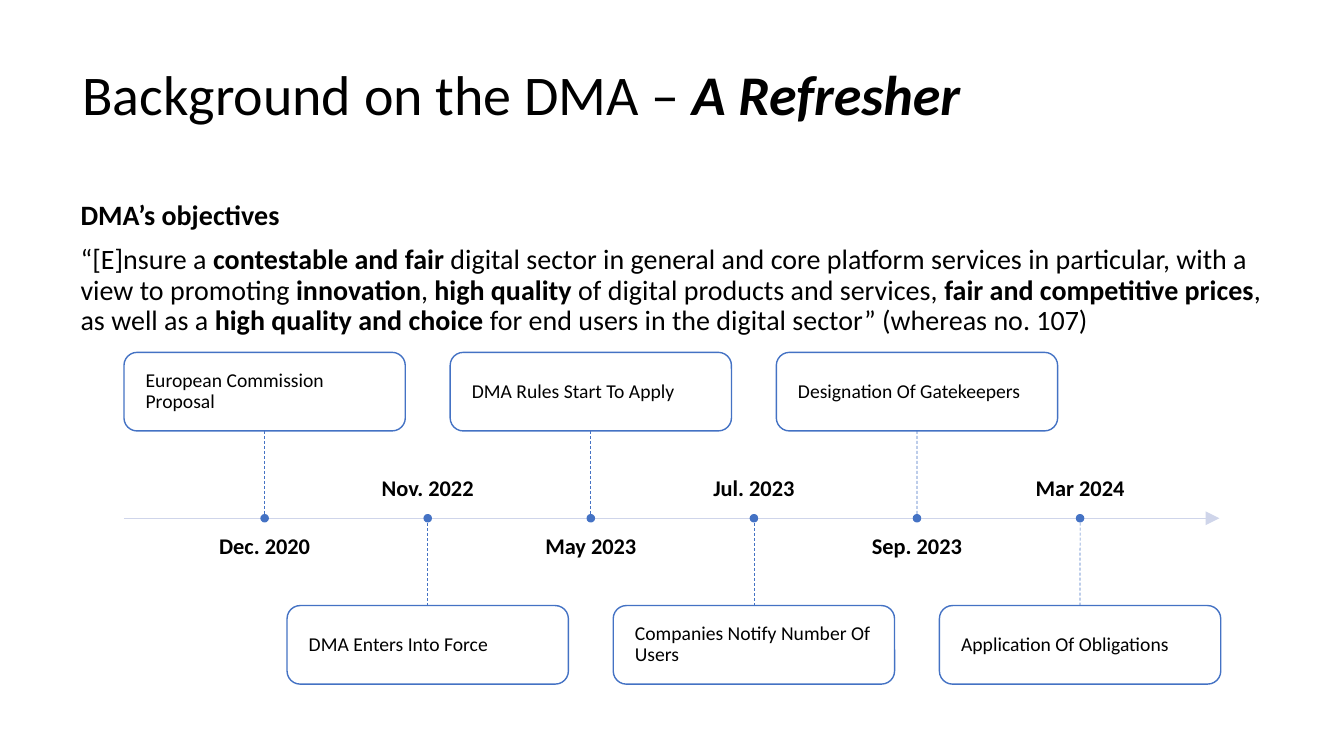
import pptx
import pptx.util
from lxml import etree
from pptx.dml.color import RGBColor
from pptx.enum.dml import MSO_LINE
from pptx.enum.shapes import MSO_CONNECTOR, MSO_SHAPE
from pptx.enum.text import MSO_ANCHOR, MSO_AUTO_SIZE, PP_ALIGN
from pptx.oxml.ns import qn
from pptx.util import Cm, Pt

BLACK = RGBColor(0x00, 0x00, 0x00)
WHITE = RGBColor(0xFF, 0xFF, 0xFF)
BLUE = RGBColor(0x44, 0x72, 0xC4)
PALE_BLUE = RGBColor(0xCF, 0xD5, 0xEA)

# Timeline geometry in centimetres
AXIS_LEFT, AXIS_RIGHT, AXIS_Y = 3.12, 30.73, 13.06
FIRST_CENTER, STEP = 6.67, 4.11
BOX_WIDTH, BOX_HEIGHT, BOX_GAP = 7.09, 1.98, 2.2
DATE_WIDTH, DATE_HEIGHT, DATE_GAP = 6.22, 1.3, 0.43
DOT_SIZE = 0.18

OBJECTIVES = [
    [("DMA’s objectives", True)],
    [
        ("“[E]nsure a ", False),
        ("contestable and fair ", True),
        ("digital sector in general and core platform services in particular, "
         "with a view to promoting ", False),
        ("innovation", True),
        (", ", False),
        ("high quality ", True),
        ("of digital products and services, ", False),
        ("fair and competitive prices", True),
        (", as well as a ", False),
        ("high quality and choice ", True),
        ("for end users in the digital sector” (whereas no. 107)", False),
    ],
]
MILESTONES = [
    ("Dec. 2020", "European Commission Proposal"),
    ("Nov. 2022", "DMA Enters Into Force"),
    ("May 2023", "DMA Rules Start To Apply"),
    ("Jul. 2023", "Companies Notify Number Of Users"),
    ("Sep. 2023", "Designation Of Gatekeepers"),
    ("Mar 2024", "Application Of Obligations"),
]


def apply_format(target, values):
    for name, value in values.items():
        setattr(target, name, value)


class TimelineSlide:
    """Holds the text style and the slide being built."""

    font_name = "Calibri"

    def __init__(self, presentation):
        self.slide = presentation.slides.add_slide(presentation.slide_layouts[1])
        self.shapes = self.slide.shapes

    def add_run(self, paragraph, text, size, bold=False, italic=False):
        run = paragraph.add_run()
        run.text = text
        apply_format(run.font, {"name": self.font_name, "size": Pt(size),
                                "bold": bold, "italic": italic})
        run.font.color.rgb = BLACK

    def set_frame(self, shape, anchor, margin):
        apply_format(shape.text_frame, {
            "word_wrap": True, "auto_size": MSO_AUTO_SIZE.NONE,
            "vertical_anchor": anchor,
            "margin_left": Cm(margin), "margin_right": Cm(margin),
            "margin_top": Cm(margin / 2), "margin_bottom": Cm(margin / 2)})
        return shape.text_frame

    def place(self, shape, left, top, width, height):
        apply_format(shape, {"left": Cm(left), "top": Cm(top),
                             "width": Cm(width), "height": Cm(height)})

    def title(self, runs):
        shape = self.shapes.title
        self.place(shape, 1.83, 0.89, 30.3, 3.15)
        paragraph = self.set_frame(shape, MSO_ANCHOR.MIDDLE, 0.25).paragraphs[0]
        apply_format(paragraph, {"alignment": PP_ALIGN.LEFT, "line_spacing": 0.9})
        for text, emphasis in runs:
            self.add_run(paragraph, text, 40, emphasis, emphasis)

    def body(self, paragraphs):
        shape = self.slide.placeholders[1]
        self.place(shape, 1.78, 4.95, 30.3, 12.22)
        frame = self.set_frame(shape, MSO_ANCHOR.TOP, 0.25)
        for index, runs in enumerate(paragraphs):
            paragraph = frame.add_paragraph() if index else frame.paragraphs[0]
            apply_format(paragraph, {"line_spacing": 0.9, "space_before": Pt(10)})
            properties = paragraph._p.get_or_add_pPr()
            properties.set("marL", "0")
            properties.set("indent", "0")
            etree.SubElement(properties, qn("a:buNone"))
            for text, bold in runs:
                self.add_run(paragraph, text, 20, bold)

    def line(self, start, end, color, width):
        connector = self.shapes.add_connector(
            MSO_CONNECTOR.STRAIGHT, *(Cm(value) for value in start + end))
        connector.line.color.rgb = color
        connector.line.width = Pt(width)
        etree.SubElement(connector._element.spPr, qn("a:effectLst"))
        return connector

    def axis(self):
        connector = self.line((AXIS_LEFT, AXIS_Y), (AXIS_RIGHT, AXIS_Y), PALE_BLUE, 1)
        outline = connector.line._get_or_add_ln()
        etree.SubElement(outline, qn("a:tailEnd"), type="triangle", w="lg", len="lg")

    def stem(self, center, box, box_edge, site):
        connector = self.line((center, box_edge), (center, AXIS_Y), BLUE, 0.5)
        connector.line.dash_style = MSO_LINE.DASH
        connector.begin_connect(box, site)

    def outlined(self, kind, center, top, width, height, fill):
        shape = self.shapes.add_shape(kind, Cm(center - width / 2), Cm(top),
                                      Cm(width), Cm(height))
        shape.shadow.inherit = False
        shape.fill.solid()
        shape.fill.fore_color.rgb = fill
        shape.line.color.rgb = BLUE
        shape.line.width = Pt(1)
        return shape

    def box(self, center, top, text):
        shape = self.outlined(MSO_SHAPE.ROUNDED_RECTANGLE, center, top,
                              BOX_WIDTH, BOX_HEIGHT, WHITE)
        paragraph = self.set_frame(shape, MSO_ANCHOR.MIDDLE, 0.45).paragraphs[0]
        apply_format(paragraph, {"alignment": PP_ALIGN.LEFT, "line_spacing": 0.9})
        self.add_run(paragraph, text, 14)
        return shape

    def dot(self, center):
        self.outlined(MSO_SHAPE.OVAL, center, AXIS_Y - DOT_SIZE / 2,
                      DOT_SIZE, DOT_SIZE, BLUE)

    def date(self, center, top, anchor, text):
        shape = self.shapes.add_textbox(Cm(center - DATE_WIDTH / 2), Cm(top),
                                        Cm(DATE_WIDTH), Cm(DATE_HEIGHT))
        paragraph = self.set_frame(shape, anchor, 0).paragraphs[0]
        apply_format(paragraph, {"alignment": PP_ALIGN.CENTER, "line_spacing": 0.9})
        self.add_run(paragraph, text, 16, bold=True)

    def milestone(self, index, date, event):
        """Events alternate above and below the axis, dates on the other side."""
        center = FIRST_CENTER + index * STEP
        if index % 2 == 0:
            box_edge, site = AXIS_Y - BOX_GAP, 2
            box_top = box_edge - BOX_HEIGHT
            date_top, anchor = AXIS_Y + DATE_GAP, MSO_ANCHOR.TOP
        else:
            box_edge, site = AXIS_Y + BOX_GAP, 0
            box_top = box_edge
            date_top, anchor = AXIS_Y - DATE_GAP - DATE_HEIGHT, MSO_ANCHOR.BOTTOM
        self.date(center, date_top, anchor, date)
        box = self.box(center, box_top, event)
        self.stem(center, box, box_edge, site)
        self.dot(center)


def main():
    presentation = pptx.Presentation()
    presentation.slide_width = Cm(33.87)
    presentation.slide_height = Cm(19.05)
    slide = TimelineSlide(presentation)

    # Title and objectives
    slide.title([("Background on the DMA – ", False), ("A Refresher", True)])
    slide.body(OBJECTIVES)

    # Timeline
    slide.axis()
    for index, (date, event) in enumerate(MILESTONES):
        slide.milestone(index, date, event)

    presentation.save("out.pptx")


if __name__ == "__main__":
    main()
